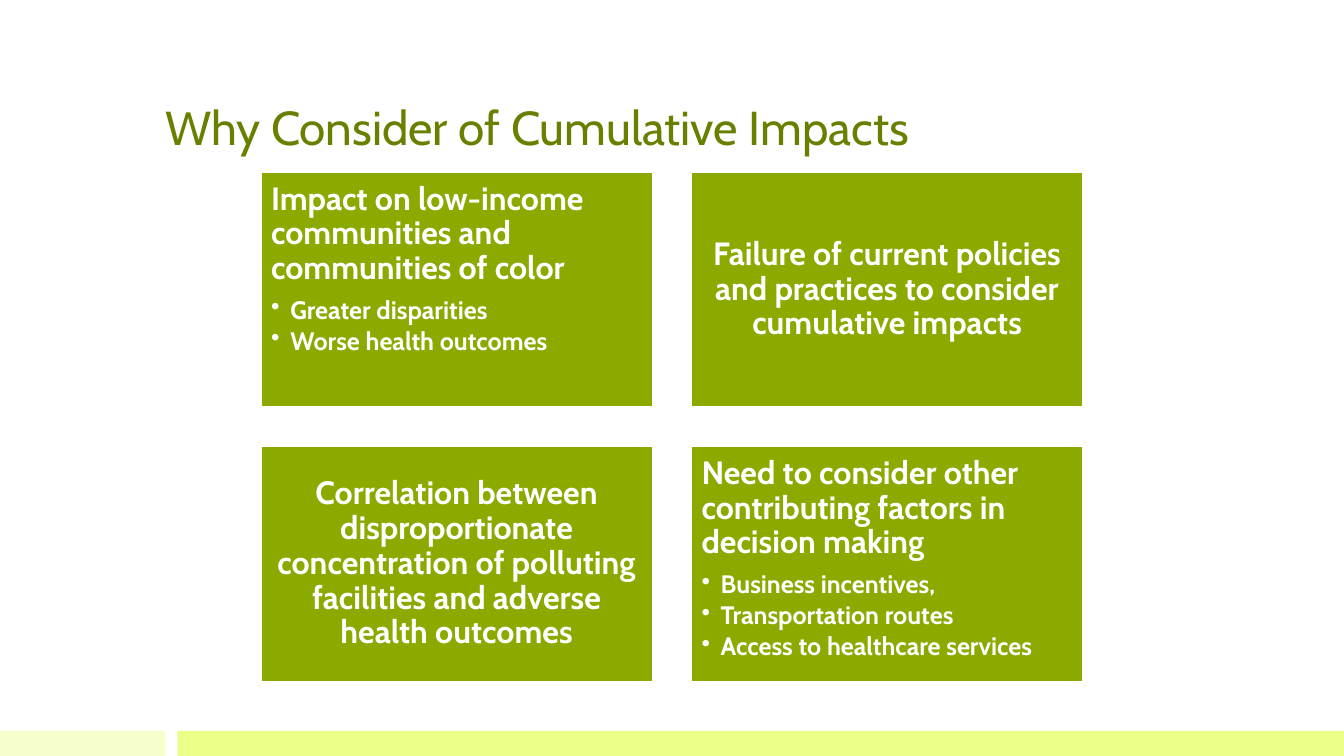
from pptx import Presentation
from pptx.dml.color import RGBColor
from pptx.enum.shapes import MSO_SHAPE
from pptx.enum.text import MSO_ANCHOR, PP_ALIGN
from pptx.oxml.ns import qn
from pptx.util import Pt
from lxml import etree

RECT = MSO_SHAPE.RECTANGLE
TOP, MIDDLE, BOTTOM = MSO_ANCHOR.TOP, MSO_ANCHOR.MIDDLE, MSO_ANCHOR.BOTTOM
LEFT, CENTER = PP_ALIGN.LEFT, PP_ALIGN.CENTER

PX = 9144
FONT = "Cabin"
COLORS = {
    "title": "688000",
    "card": "8BAA00",
    "white": "FFFFFF",
    "pale": "F6FFCC",
    "lime": "E9FF88",
}
CARDS = [
    ("Impact on low-income communities and communities of color",
     ["Greater disparities", "Worse health outcomes"]),
    ("Failure of current policies and practices to consider cumulative impacts", []),
    ("Correlation between disproportionate concentration of polluting "
     "facilities and adverse health outcomes", []),
    ("Need to consider other contributing factors in decision making",
     ["Business incentives,", "Transportation routes", "Access to healthcare services"]),
]


def color(name):
    return RGBColor.from_string(COLORS[name])


def scale(box):
    return [n * PX for n in box]


def add_rect(slide, box, fill, line=None):
    rect = slide.shapes.add_shape(RECT, *scale(box))
    rect.shadow.inherit = False
    rect.fill.solid()
    rect.fill.fore_color.rgb = color(fill)
    if line:
        rect.line.color.rgb = color(line)
        rect.line.width = Pt(1)
    else:
        rect.line.fill.background()
    return rect


def style(para, size, ink, bold=False):
    for run in para.runs:
        run.font.name = FONT
        run.font.size = Pt(size)
        run.font.bold = bold
        run.font.color.rgb = color(ink)


def add_bullet(para):
    props = para._p.get_or_add_pPr()
    props.set("marL", str(19 * PX))
    props.set("indent", str(-19 * PX))
    etree.SubElement(props, qn("a:buChar")).set("char", "•")


def add_title(slide, box):
    title = slide.shapes.add_textbox(*scale(box))
    frame = title.text_frame
    frame.word_wrap = True
    frame.vertical_anchor = BOTTOM
    frame.text = "Why Consider of Cumulative Impacts"
    style(frame.paragraphs[0], 34, "title")


def add_card(slide, box, head, items):
    frame = add_rect(slide, box, "card", "white").text_frame
    frame.word_wrap = True
    frame.margin_left = frame.margin_right = 10 * PX
    frame.margin_top = frame.margin_bottom = 10 * PX
    frame.vertical_anchor = TOP if items else MIDDLE
    frame.text = head
    for item in items:
        frame.add_paragraph().text = item
    for i, para in enumerate(frame.paragraphs):
        para.alignment = LEFT if items else CENTER
        para.line_spacing = 0.9
        para.space_after = Pt(2.7 if i else 8)
        style(para, 18 if i else 23, "white", True)
        if i:
            para.level = 1
            add_bullet(para)


def add_grid(slide, box):
    left, top, width, height = box
    wide, high = 388, 233
    for i, (head, items) in enumerate(CARDS):
        row, col = divmod(i, 2)
        x = left + col * (width - wide)
        y = top + row * (height - high)
        add_card(slide, (x, y, wide, high), head, items)


def add_footer(slide, box):
    left, top, width, height = box
    split, gap = 164, 12
    add_rect(slide, (left, top, split, height), "pale")
    start = split + gap
    add_rect(slide, (left + start, top, width - start, height), "lime")


def main():
    deck = Presentation()
    deck.slide_width, deck.slide_height = scale((1333, 750))
    slide = deck.slides.add_slide(deck.slide_layouts[6])
    add_footer(slide, (0, 725, 1333, 25))
    add_title(slide, (154, 30, 1025, 129))
    add_grid(slide, (259, 171, 815, 505))
    deck.save("out.pptx")


if __name__ == "__main__":
    main()
